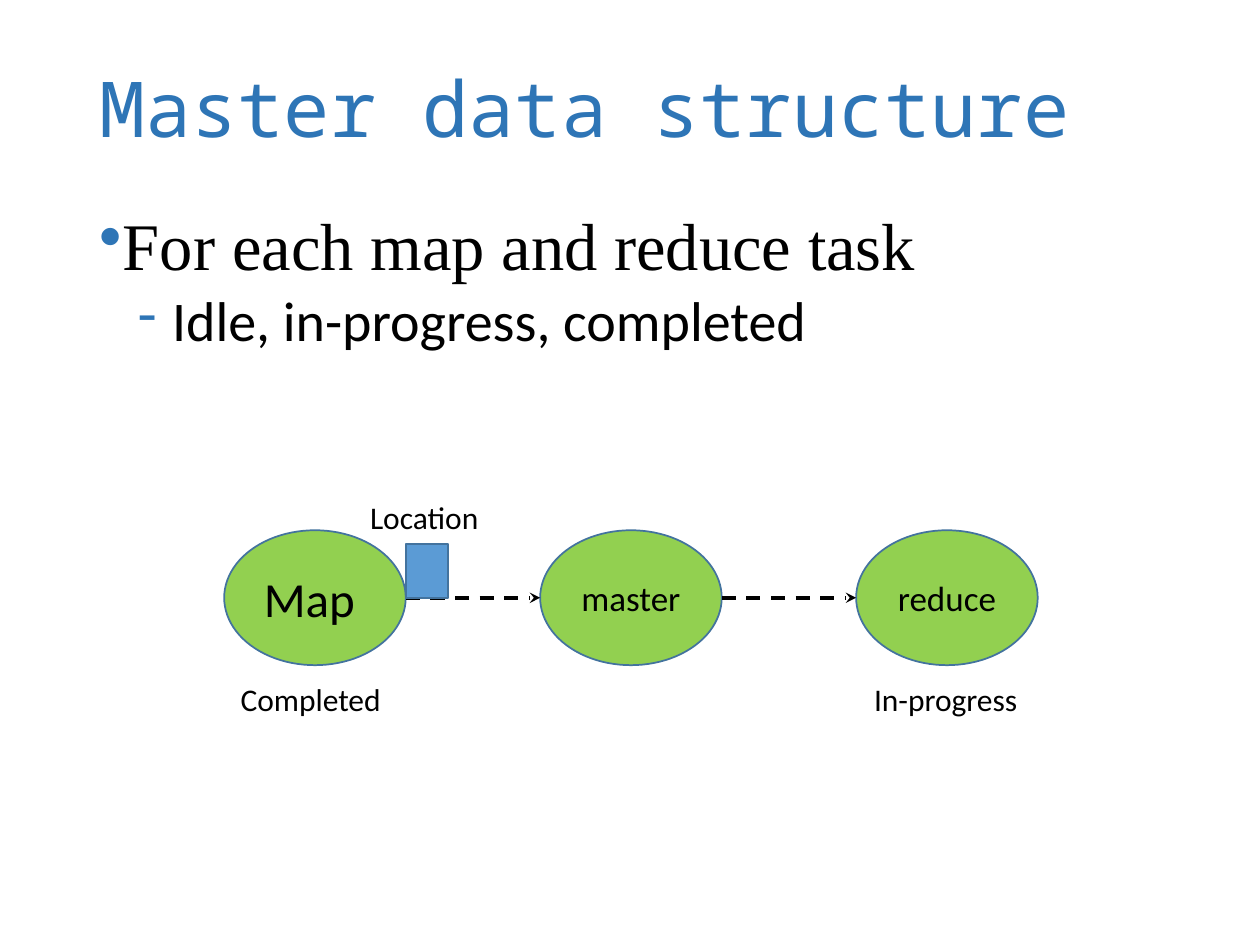
from lxml.etree import SubElement
from pptx import Presentation
from pptx.dml.color import RGBColor
from pptx.enum.dml import MSO_LINE
from pptx.enum.shapes import MSO_CONNECTOR, MSO_SHAPE
from pptx.enum.text import MSO_ANCHOR, PP_ALIGN
from pptx.oxml.ns import qn
from pptx.util import Cm, Pt

# Content
TITLE = "Master data structure"
# text, font, size, left margin (cm), space before (pt), bullet
BULLETS = [
    ("For each map and reduce task", "serif", "bullet", 0.48, 10, "•"),
    ("Idle, in-progress, completed", "sans", "sub", 1.47, 5, "‐"),
]
# name, size, state shown below, label left and width (cm)
NODES = [
    ("Map ", "node_big", ("Completed", 4.6, 3.53)),
    ("master", "node", None),
    ("reduce", "node", ("In-progress", 17.37, 3.43)),
]
LOCATION = ("Location", 7.21, 2.87)

THEME = {
    "accent": "2E75B6", "text": "000000", "node": "92D050",
    "block": "5B9BD5", "outline": "43739E",
    "mono": "Noto Sans Mono", "serif": "Times New Roman", "sans": "Calibri",
    "title": 44, "bullet": 38, "sub": 32, "node_big": 28, "node_size": 20, "label": 18,
}
SIZES = {"node": THEME["node_size"]}

# Layout in cm
NODE_LEFT, NODE_TOP, NODE_W, NODE_H, PITCH = 4.52, 10.69, 3.66, 2.72, 6.37
BLOCK_W, BLOCK_H = 0.86, 1.09
AXIS = NODE_TOP + NODE_H / 2


def color(key):
    return RGBColor.from_string(THEME[key])


def style(p, font, size, fill="text"):
    for r in p.runs:
        r.font.name = THEME[font]
        r.font.size = Pt(SIZES.get(size) or THEME[size])
        r.font.color.rgb = color(fill)


def add_text(s, text, left, top, width, height, wrap=True):
    tf = s.shapes.add_textbox(Cm(left), Cm(top), Cm(width), Cm(height)).text_frame
    tf.word_wrap = wrap
    tf.text = text
    return tf


def add_label(s, text, left, width, top):
    tf = add_text(s, text, left, top, width, 1.02, wrap=False)
    style(tf.paragraphs[0], "sans", "label")


def add_bullet(p, char, margin):
    pPr = p._p.get_or_add_pPr()
    pPr.set("marL", str(Cm(margin)))
    pPr.set("indent", str(Cm(-0.69)))
    clr = SubElement(pPr, qn("a:buClr"))
    SubElement(clr, qn("a:srgbClr"), val=THEME["accent"])
    SubElement(pPr, qn("a:buChar"), char=char)


def add_box(s, kind, left, top, width, height, fill):
    sp = s.shapes.add_shape(kind, Cm(left), Cm(top), Cm(width), Cm(height))
    sp.shadow.inherit = False
    sp.fill.solid()
    sp.fill.fore_color.rgb = color(fill)
    sp.line.color.rgb = color("outline")
    sp.line.width = Pt(1)
    return sp


def add_arrow(s, x1, x2, y):
    line = s.shapes.add_connector(MSO_CONNECTOR.STRAIGHT, Cm(x1), Cm(y), Cm(x2), Cm(y))
    line.line.color.rgb = color("text")
    line.line.width = Pt(2)
    line.line.dash_style = MSO_LINE.DASH
    SubElement(line.line._get_or_add_ln(), qn("a:tailEnd"), type="stealth")
    SubElement(line._element.spPr, qn("a:effectLst"))


def main():
    prs = Presentation()
    prs.slide_width, prs.slide_height = Cm(25.4), Cm(19.05)
    s = prs.slides.add_slide(prs.slide_layouts[6])

    # Title
    tf = add_text(s, TITLE, 1.75, 0.43, 21.9, 3.68)
    tf.vertical_anchor = MSO_ANCHOR.MIDDLE
    tf.paragraphs[0].line_spacing = 0.9
    style(tf.paragraphs[0], "mono", "title", "accent")

    # Bulleted text
    tf = add_text(s, "\n".join(b[0] for b in BULLETS), 1.75, 4.17, 21.9, 12.9)
    for level, (p, b) in enumerate(zip(tf.paragraphs, BULLETS)):
        _, font, size, margin, before, char = b
        p.level = level
        p.line_spacing = 0.9
        p.space_before = Pt(before)
        add_bullet(p, char, margin)
        style(p, font, size)

    # Nodes with their states, and arrows between neighbours
    for i, (name, size, state) in enumerate(NODES):
        left = NODE_LEFT + i * PITCH
        sp = add_box(s, MSO_SHAPE.OVAL, left, NODE_TOP, NODE_W, NODE_H, "node")
        tf = sp.text_frame
        tf.text = name
        tf.vertical_anchor = MSO_ANCHOR.MIDDLE
        tf.paragraphs[0].alignment = PP_ALIGN.CENTER
        style(tf.paragraphs[0], "sans", size)
        if state:
            add_label(s, *state, 13.59)
        if i:
            add_arrow(s, left - PITCH + NODE_W, left, AXIS)

    # Location block sent to the master
    add_box(s, MSO_SHAPE.RECTANGLE, NODE_LEFT + NODE_W, AXIS - BLOCK_H,
            BLOCK_W, BLOCK_H, "block")
    add_label(s, *LOCATION, 9.91)

    prs.save("out.pptx")


if __name__ == "__main__":
    main()
